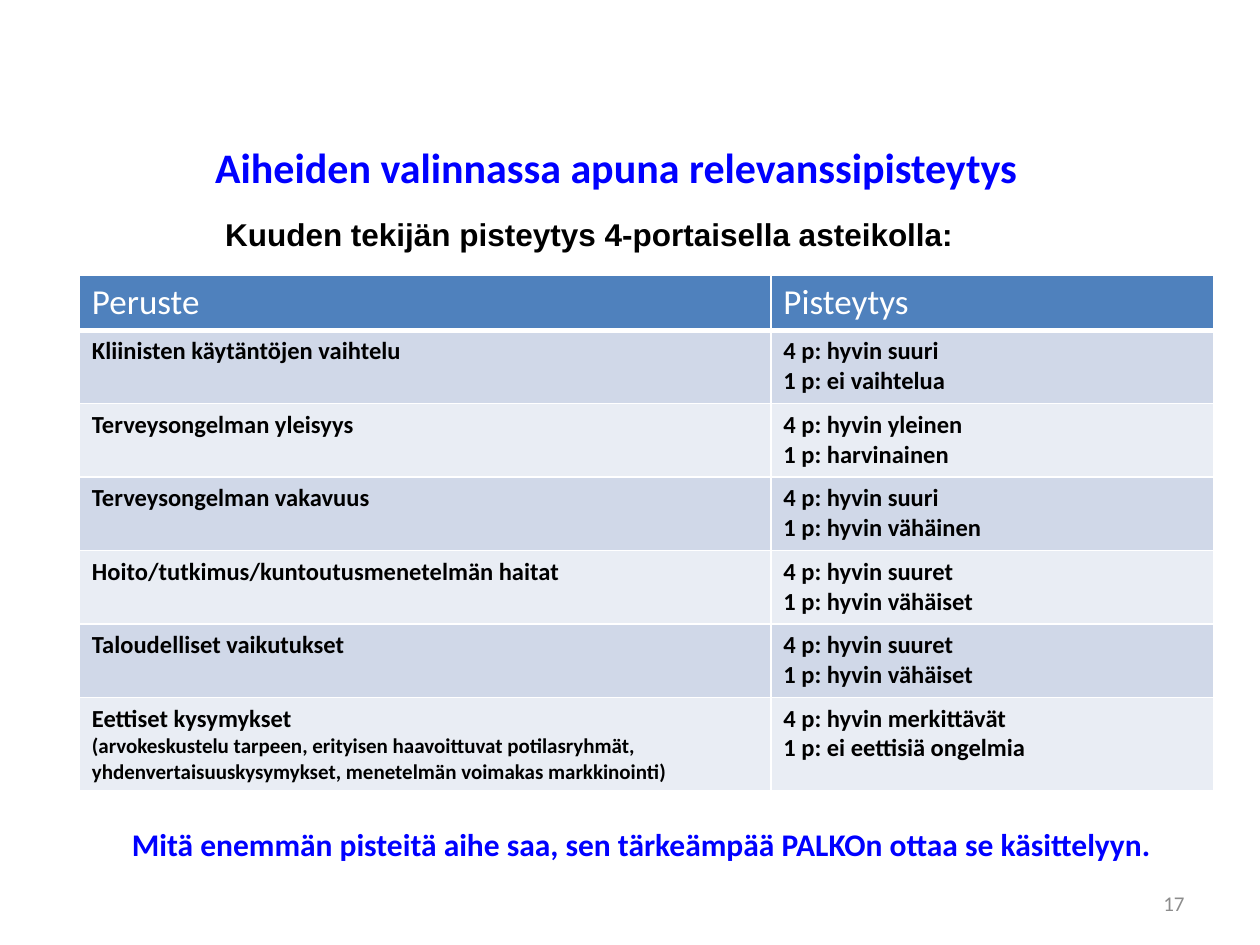
import pptx
import pptx.dml.color
import pptx.enum.text
import pptx.oxml
import pptx.oxml.ns
import pptx.util
from pptx.dml.color import RGBColor
from pptx.util import Cm

BLUE = RGBColor(0x00, 0x00, 0xFF)
BLACK = RGBColor(0x00, 0x00, 0x00)
WHITE = RGBColor(0xFF, 0xFF, 0xFF)
GREY = RGBColor(0x8C, 0x8C, 0x8C)
HEADER_FILL = RGBColor(0x4F, 0x81, 0xBD)
BAND_FILLS = [RGBColor(0xD0, 0xD8, 0xE8), RGBColor(0xE9, 0xED, 0xF4)]

HEADER = ["Peruste", "Pisteytys"]
ETHICS_NOTE = ("(arvokeskustelu tarpeen, erityisen haavoittuvat potilasryhmät, "
               "yhdenvertaisuuskysymykset, menetelmän voimakas markkinointi)")
# Criterion, meaning of 4 points, meaning of 1 point, optional note
CRITERIA = [
    ("Kliinisten käytäntöjen vaihtelu", "hyvin suuri", "ei vaihtelua", None),
    ("Terveysongelman yleisyys", "hyvin yleinen", "harvinainen", None),
    ("Terveysongelman vakavuus", "hyvin suuri", "hyvin vähäinen", None),
    ("Hoito/tutkimus/kuntoutusmenetelmän haitat", "hyvin suuret", "hyvin vähäiset", None),
    ("Taloudelliset vaikutukset", "hyvin suuret", "hyvin vähäiset", None),
    ("Eettiset kysymykset", "hyvin merkittävät", "ei eettisiä ongelmia", ETHICS_NOTE),
]


class SlideBuilder:
    def __init__(self, slide, font="Calibri"):
        self.slide = slide
        self.font = font

    def add_run(self, paragraph, text, size, color, bold, font=None):
        run = paragraph.add_run()
        run.text = text
        run.font.name = font or self.font
        run.font.size = pptx.util.Pt(size)
        run.font.bold = bold
        run.font.color.rgb = color

    def text_box(self, text, left, top, width, height, size, color,
                 bold=True, font=None, wrap=False):
        shape = self.slide.shapes.add_textbox(Cm(left), Cm(top), Cm(width), Cm(height))
        frame = shape.text_frame
        frame.word_wrap = wrap
        frame.auto_size = pptx.enum.text.MSO_AUTO_SIZE.SHAPE_TO_FIT_TEXT
        self.add_run(frame.paragraphs[0], text, size, color, bold, font)
        return shape

    def page_number(self, text, left, top, width, height):
        shape = self.text_box(text, left, top, width, height, 12, GREY, bold=False, wrap=True)
        frame = shape.text_frame
        frame.auto_size = pptx.enum.text.MSO_AUTO_SIZE.NONE
        frame.vertical_anchor = pptx.enum.text.MSO_ANCHOR.MIDDLE
        frame.paragraphs[0].alignment = pptx.enum.text.PP_ALIGN.RIGHT

    def table(self, left, top, column_widths, row_heights):
        shape = self.slide.shapes.add_table(
            len(row_heights), len(column_widths), Cm(left), Cm(top),
            Cm(sum(column_widths)), Cm(sum(row_heights)))
        for column, width in zip(shape.table.columns, column_widths):
            column.width = Cm(width)
        for row, height in zip(shape.table.rows, row_heights):
            row.height = Cm(height)
        return shape.table

    def cell(self, cell, lines, fill, color, bold, bottom_width=1):
        """Fill a cell with (text, size) lines, one paragraph each."""
        frame = cell.text_frame
        for index, (text, size) in enumerate(lines):
            paragraph = frame.paragraphs[0] if index == 0 else frame.add_paragraph()
            self.add_run(paragraph, text, size, color, bold)
        self.cell_borders(cell, bottom_width)
        cell.fill.solid()
        cell.fill.fore_color.rgb = fill

    def cell_borders(self, cell, bottom_width):
        properties = cell._tc.get_or_add_tcPr()
        for side, width in (("L", 1), ("R", 1), ("T", 1), ("B", bottom_width)):
            properties.append(pptx.oxml.parse_xml(
                f'<a:ln{side} {pptx.oxml.ns.nsdecls("a")} w="{pptx.util.Pt(width)}">'
                f'<a:solidFill><a:srgbClr val="{WHITE}"/></a:solidFill></a:ln{side}>'))


def main():
    presentation = pptx.Presentation()
    presentation.slide_width = Cm(25.4)
    presentation.slide_height = Cm(19.05)
    builder = SlideBuilder(presentation.slides.add_slide(presentation.slide_layouts[6]))

    builder.page_number("17", 22.5, 17.73, 1.63, 0.94)

    table = builder.table(1.6, 5.54, [13.94, 8.92], [0.9] + [1.48] * 5 + [1.88])
    for column, title in enumerate(HEADER):
        builder.cell(table.cell(0, column), [(title, 20)], HEADER_FILL, WHITE,
                     bold=False, bottom_width=3)
    for row, (criterion, highest, lowest, note) in enumerate(CRITERIA, start=1):
        fill = BAND_FILLS[(row - 1) % 2]
        basis = [(criterion, 14)] + ([(note, 12)] if note else [])
        scores = [(f"4 p: {highest}", 14), (f"1 p: {lowest}", 14)]
        for column, lines in enumerate([basis, scores]):
            builder.cell(table.cell(row, column), lines, fill, BLACK, bold=True)

    builder.text_box("Aiheiden valinnassa apuna relevanssipisteytys",
                     4.09, 2.72, 16.87, 1.27, 24, BLUE)
    builder.text_box("Kuuden tekijän pisteytys 4-portaisella asteikolla:",
                     4.29, 4.22, 17.48, 1.02, 18, BLACK, font="Arial", wrap=True)
    builder.text_box("Mitä enemmän pisteitä aihe saa, sen tärkeämpää PALKOn ottaa se käsittelyyn.",
                     2.41, 16.51, 21.26, 1.02, 18, BLUE)

    presentation.save("out.pptx")


if __name__ == "__main__":
    main()
